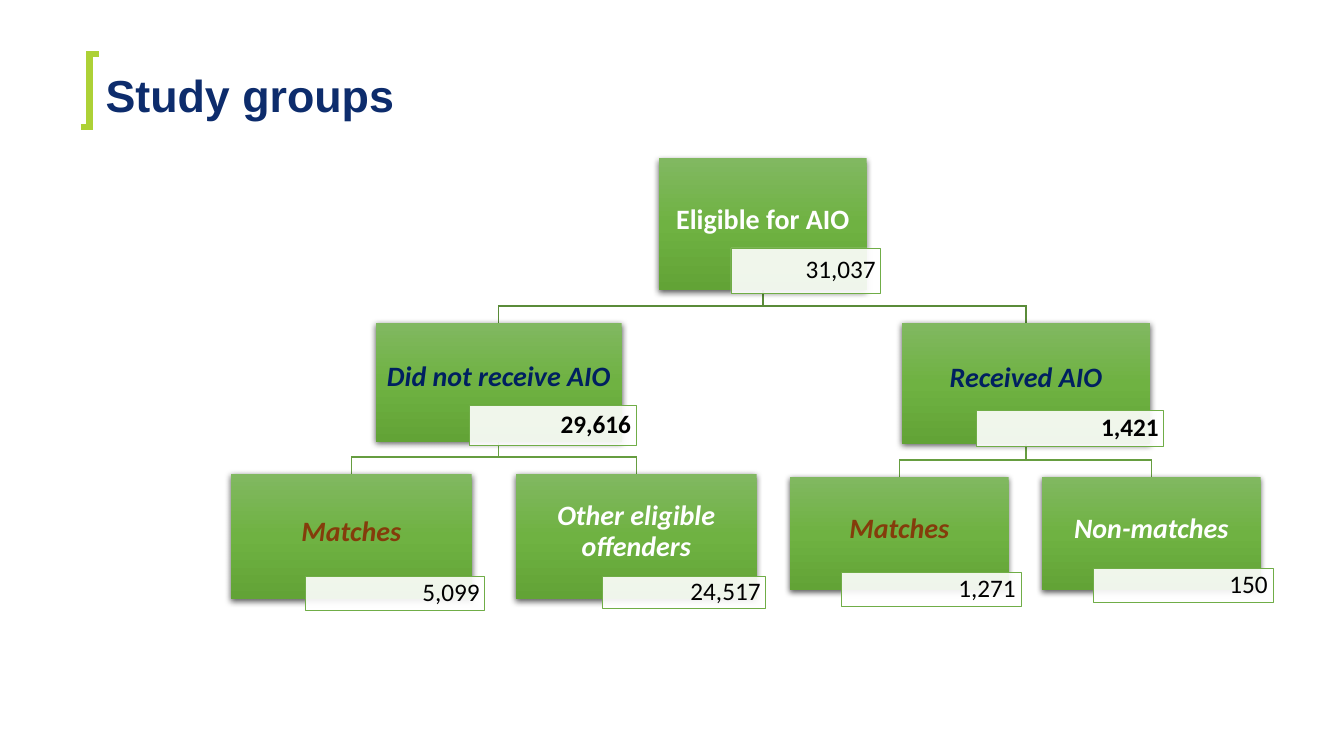
from dataclasses import dataclass

from pptx import Presentation
from pptx.dml.color import RGBColor
from pptx.enum.shapes import MSO_SHAPE as Preset
from pptx.enum.text import MSO_ANCHOR as Anchor, PP_ALIGN as Align
from pptx.oxml import parse_xml
from pptx.oxml.ns import nsdecls, qn
from pptx.shapes.autoshape import Shape
from pptx.shapes.shapetree import SlideShapes
from pptx.util import Cm, Pt

NAVY = RGBColor(0x0D, 0x2C, 0x6C)
LIME = RGBColor(0xAD, 0xD1, 0x36)
WHITE = RGBColor(0xFF, 0xFF, 0xFF)
BLACK = RGBColor(0x00, 0x00, 0x00)
DARK_BLUE = RGBColor(0x00, 0x20, 0x60)
BROWN = RGBColor(0x84, 0x3C, 0x0B)
TAG_EDGE = RGBColor(0x70, 0xAD, 0x47)
UPPER_LINK = RGBColor(0x5A, 0x8B, 0x39)
LOWER_LINK = RGBColor(0x66, 0x9D, 0x40)
GREENS = {0: RGBColor(0x81, 0xB8, 0x61), 50: RGBColor(0x6F, 0xB2, 0x42),
          100: RGBColor(0x62, 0xA3, 0x36)}

LINK_DROP = 0.42  # cm from the horizontal run of a link to the child box


@dataclass(frozen=True)
class Area:
    """A rectangle in centimetres."""
    left: float
    top: float
    width: float
    height: float

    @property
    def middle(self) -> float:
        return self.left + self.width / 2

    @property
    def bottom(self) -> float:
        return self.top + self.height

    def lengths(self) -> tuple[Cm, Cm, Cm, Cm]:
        return Cm(self.left), Cm(self.top), Cm(self.width), Cm(self.height)


@dataclass(frozen=True)
class Group:
    label: str
    count: str
    color: RGBColor
    box: Area
    tag: Area
    italic: bool = True
    bold_count: bool = False


@dataclass(frozen=True)
class Link:
    parent: Group
    child: Group
    color: RGBColor


# Study groups
ELIGIBLE = Group("Eligible for AIO", "31,037", WHITE, Area(16.61, 3.99, 5.23, 3.33),
                 Area(18.42, 6.25, 3.78, 1.14), italic=False)
NOT_RECEIVED = Group("Did not receive AIO", "29,616", DARK_BLUE, Area(9.47, 8.13, 6.2, 3),
                     Area(11.84, 10.21, 4.19, 1.02), bold_count=True)
NOT_MATCHES = Group("Matches", "5,099", BROWN, Area(5.82, 11.94, 6.07, 3.15),
                    Area(7.7, 14.53, 4.52, 0.86))
OTHERS = Group("Other eligible offenders", "24,517", WHITE, Area(13, 11.94, 6.07, 3.15),
               Area(15.19, 14.53, 4.11, 0.79))
RECEIVED = Group("Received AIO", "1,421", DARK_BLUE, Area(22.73, 8.13, 6.25, 3.05),
                 Area(24.61, 10.34, 4.72, 0.91), bold_count=True)
MATCHES = Group("Matches", "1,271", BROWN, Area(19.91, 12.01, 5.51, 2.87),
                Area(21.21, 14.43, 4.52, 0.86))
NON_MATCHES = Group("Non-matches", "150", WHITE, Area(26.26, 12.01, 5.51, 2.87),
                    Area(27.56, 14.33, 4.52, 0.86))

GROUPS = [ELIGIBLE, NOT_RECEIVED, NOT_MATCHES, OTHERS, RECEIVED, MATCHES, NON_MATCHES]
LINKS = [
    Link(RECEIVED, NON_MATCHES, LOWER_LINK),
    Link(RECEIVED, MATCHES, LOWER_LINK),
    Link(ELIGIBLE, RECEIVED, UPPER_LINK),
    Link(NOT_RECEIVED, OTHERS, LOWER_LINK),
    Link(NOT_RECEIVED, NOT_MATCHES, LOWER_LINK),
    Link(ELIGIBLE, NOT_RECEIVED, UPPER_LINK),
]


def write(shape: Shape, text: str, font_name: str, size: int, color: RGBColor,
          align: Align, bold: bool = False, italic: bool = False) -> None:
    frame = shape.text_frame
    frame.word_wrap = True
    frame.vertical_anchor = Anchor.MIDDLE
    paragraph = frame.paragraphs[0]
    paragraph.text = text
    paragraph.alignment = align
    paragraph.line_spacing = 0.9
    font = paragraph.font
    font.name, font.size, font.color.rgb = font_name, Pt(size), color
    font.bold, font.italic = bold, italic


def set_margins(shape: Shape, side: float, bottom: float) -> None:
    frame = shape.text_frame
    frame.margin_left = frame.margin_right = Cm(side)
    frame.margin_top, frame.margin_bottom = Cm(0.03), Cm(bottom)


def draw_path(shapes: SlideShapes, points: list[tuple[float, float]],
              color: RGBColor, width: float) -> None:
    start, *others = [(Cm(x), Cm(y)) for x, y in points]
    builder = shapes.build_freeform(*start)
    builder.add_line_segments(others, close=False)
    path = builder.convert_to_shape()
    path.shadow.inherit = False
    path.fill.background()
    path.line.color.rgb, path.line.width = color, Pt(width)
    path.line._ln.append(parse_xml(f'<a:miter {nsdecls("a")} lim="800000"/>'))


def draw_link(shapes: SlideShapes, link: Link) -> None:
    parent, child = link.parent.box, link.child.box
    bend = child.top - LINK_DROP
    draw_path(shapes, [(parent.middle, parent.bottom), (parent.middle, bend),
                       (child.middle, bend), (child.middle, child.top)], link.color, 1)


def add_gradient_and_shadow(shape: Shape) -> None:
    stops = "".join(f'<a:gs pos="{share * 1000}"><a:srgbClr val="{color}"/></a:gs>'
                    for share, color in GREENS.items())
    properties = shape._element.spPr
    properties.insert(2, parse_xml(
        f'<a:gradFill {nsdecls("a")} rotWithShape="1"><a:gsLst>{stops}</a:gsLst>'
        '<a:lin ang="5400000" scaled="0"/></a:gradFill>'))
    properties.append(parse_xml(
        f'<a:effectLst {nsdecls("a")}><a:outerShdw blurRad="{Pt(4.5)}" dist="{Pt(1.5)}" '
        'dir="5400000" algn="ctr" rotWithShape="0"><a:srgbClr val="000000">'
        '<a:alpha val="63000"/></a:srgbClr></a:outerShdw></a:effectLst>'))


def draw_group(shapes: SlideShapes, group: Group) -> None:
    # Green box with the group's name
    box = shapes.add_shape(Preset.RECTANGLE, *group.box.lengths())
    box.line.fill.background()
    add_gradient_and_shadow(box)
    set_margins(box, 0.03, 0.25)
    write(box, group.label, "Calibri", 20, group.color, Align.CENTER, True, group.italic)

    # Translucent tag with the count
    tag = shapes.add_shape(Preset.RECTANGLE, *group.tag.lengths())
    tag.shadow.inherit = False
    tag.fill.solid()
    tag.fill.fore_color.rgb = WHITE
    fill_color = tag._element.spPr.find(f".//{qn('a:srgbClr')}")
    fill_color.append(parse_xml(f'<a:alpha {nsdecls("a")} val="90000"/>'))
    tag.line.color.rgb, tag.line.width = TAG_EDGE, Pt(0.5)
    set_margins(tag, 0.13, 0.03)
    write(tag, group.count, "Calibri", 18, BLACK, Align.RIGHT, group.bold_count)


def main() -> None:
    deck = Presentation()
    deck.slide_width, deck.slide_height = Cm(33.87), Cm(19.05)
    page = deck.slides.add_slide(deck.slide_layouts[6])

    # Title with its bracket
    draw_path(page.shapes, [(2.03, 3.2), (2.26, 3.2), (2.26, 1.37), (2.49, 1.37)], LIME, 4.5)
    title = page.shapes.add_textbox(*Area(2.41, 1.73, 29.67, 1.47).lengths())
    write(title, "Study groups", "Arial", 32, NAVY, Align.LEFT, bold=True)

    # Tree: links lie behind the groups
    for link in LINKS:
        draw_link(page.shapes, link)
    for group in GROUPS:
        draw_group(page.shapes, group)

    deck.save("out.pptx")


if __name__ == "__main__":
    main()
